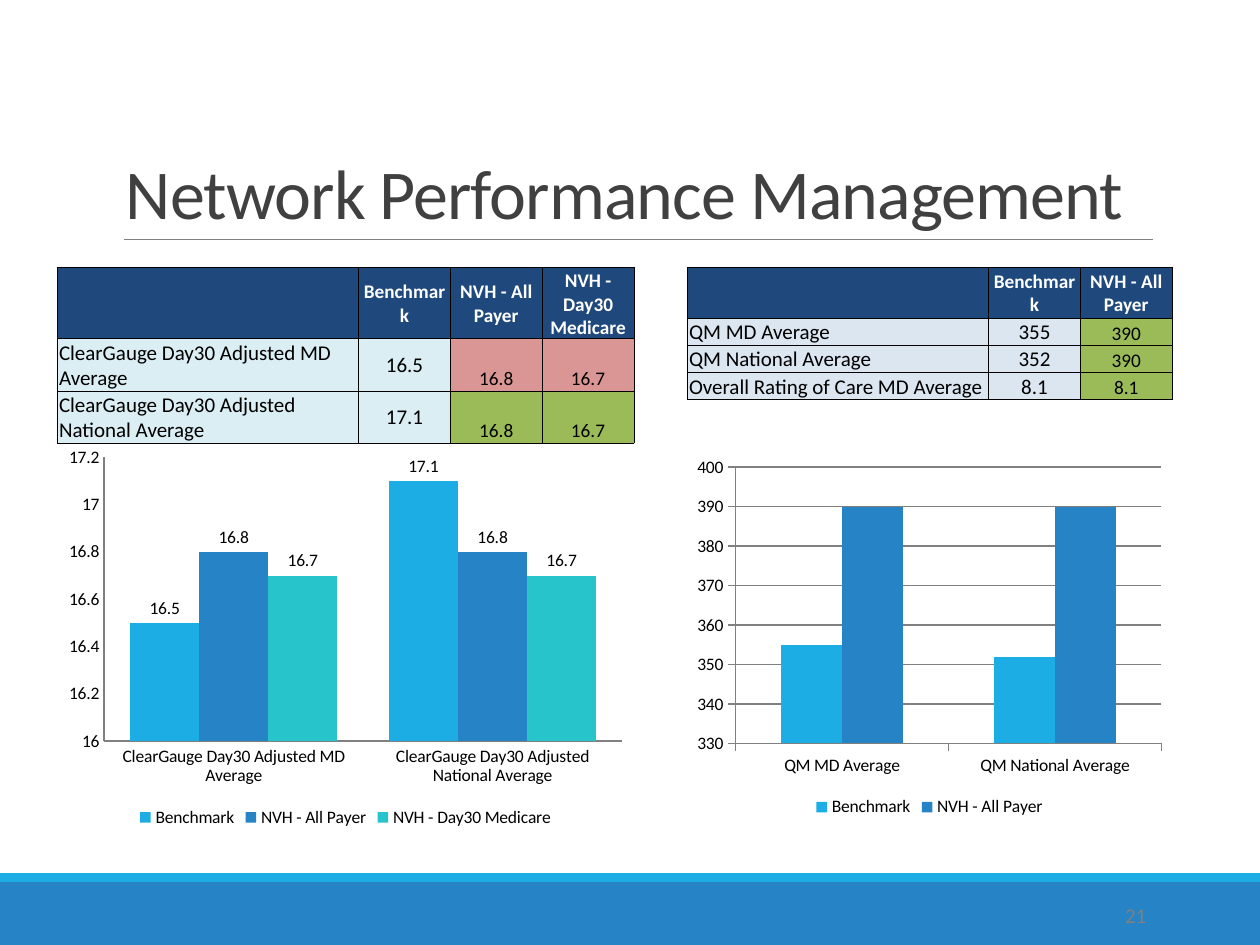
"""Build the network performance slide with two tables and two column charts."""
from lxml.etree import SubElement
from pptx import Presentation
from pptx.chart.data import CategoryChartData
from pptx.dml.color import RGBColor
from pptx.enum.chart import XL_CHART_TYPE, XL_LABEL_POSITION, XL_LEGEND_POSITION, XL_TICK_MARK
from pptx.enum.shapes import MSO_CONNECTOR, MSO_SHAPE
from pptx.enum.text import MSO_ANCHOR, PP_ALIGN
from pptx.oxml import parse_xml
from pptx.oxml.ns import nsdecls, qn
from pptx.util import Cm, Pt

BLUE = RGBColor(0x26, 0x83, 0xC6)
SKY = RGBColor(0x1C, 0xAD, 0xE4)
TEAL = RGBColor(0x28, 0xC4, 0xCC)
NAVY = RGBColor(0x1F, 0x49, 0x7D)
PALE_AQUA = RGBColor(0xDA, 0xEE, 0xF3)
PALE_BLUE = RGBColor(0xDC, 0xE6, 0xF1)
RED = RGBColor(0xDA, 0x96, 0x94)
GREEN = RGBColor(0x9B, 0xBB, 0x59)
DARK = RGBColor(0x40, 0x40, 0x40)
GREY = RGBColor(0x80, 0x80, 0x80)
BLACK = RGBColor(0, 0, 0)
WHITE = RGBColor(0xFF, 0xFF, 0xFF)

LEFT, RIGHT, TABLE_TOP = 1.16, 13.86, 5.39
LABEL_WIDTH, VALUE_WIDTH = 6.07, 1.85
BENCHMARK, ALL_PAYER, MEDICARE = "Benchmark", "NVH - All Payer", "NVH - Day30 Medicare"


class SlideBuilder:
    """Hold the style and the current slide."""

    font_name = "Calibri"
    series_colors = (SKY, BLUE, TEAL)

    def __init__(self, page):
        self.page = page

    def style(self, font, size, color, bold=False):
        font.name, font.size, font.bold = self.font_name, Pt(size), bold
        font.color.rgb = color

    def band(self, top, height, color):
        bar = self.page.shapes.add_shape(MSO_SHAPE.RECTANGLE, 0, Cm(top), Cm(25.4), Cm(height))
        bar.shadow.inherit = False
        bar.fill.solid()
        bar.fill.fore_color.rgb = color
        bar.line.fill.background()

    def rule(self, left, right, top):
        line = self.page.shapes.add_connector(
            MSO_CONNECTOR.STRAIGHT, Cm(left), Cm(top), Cm(right), Cm(top))
        line.line.color.rgb = GREY
        line.line.width = Pt(0.5)
        SubElement(line._element.spPr, qn("a:effectLst"))

    def text(self, words, place, size, color, anchor, align=PP_ALIGN.LEFT, spacing=1.0, tracking=0):
        frame = self.page.shapes.add_textbox(*map(Cm, place)).text_frame
        frame.word_wrap = True
        frame.vertical_anchor = anchor
        para = frame.paragraphs[0]
        span = para.add_run()
        span.text = words
        span._r.get_or_add_rPr().set("spc", str(tracking))
        para.alignment, para.line_spacing = align, spacing
        self.style(para.font, size, color)

    def cell(self, cell, words, fill, size=12, color=BLACK, bold=False,
             align=PP_ALIGN.CENTER, anchor=MSO_ANCHOR.MIDDLE):
        cell.text = words
        cell.vertical_anchor = anchor
        cell.margin_left = cell.margin_right = cell.margin_top = Cm(0.03)
        cell.margin_bottom = 0
        para = cell.text_frame.paragraphs[0]
        para.alignment = align
        self.style(para.font, size, color, bold)
        properties = cell._tc.get_or_add_tcPr()
        for side in ("lnL", "lnR", "lnT", "lnB"):
            properties.append(parse_xml(
                f'<a:{side} {nsdecls("a")} w="6350"><a:solidFill>'
                f'<a:srgbClr val="{BLACK}"/></a:solidFill></a:{side}>'))
        cell.fill.solid()
        cell.fill.fore_color.rgb = fill

    def table(self, left, headings, rows, label_fill, heights):
        widths = [LABEL_WIDTH] + [VALUE_WIDTH] * len(headings)
        row_heights = [heights[0]] + [heights[1]] * len(rows)
        table = self.page.shapes.add_table(
            len(row_heights), len(widths), Cm(left), Cm(TABLE_TOP),
            Cm(sum(widths)), Cm(sum(row_heights))).table
        for column, width in zip(table.columns, widths):
            column.width = Cm(width)
        for row, height in zip(table.rows, row_heights):
            row.height = Cm(height)
        for index, heading in enumerate(["", *headings]):
            self.cell(table.cell(0, index), heading, NAVY, 11, WHITE, True)
        for number, (label, benchmark, results, result_fill) in enumerate(rows, 1):
            self.cell(table.cell(number, 0), label, label_fill, align=PP_ALIGN.LEFT)
            self.cell(table.cell(number, 1), benchmark, label_fill)
            for index, result in enumerate(results, 2):
                self.cell(table.cell(number, index), result, result_fill, 11,
                          anchor=MSO_ANCHOR.BOTTOM)

    def chart(self, place, categories, series, scale, gap, tick, grid=False, labels=False):
        data = CategoryChartData()
        data.categories = categories
        for name, values in series.items():
            data.add_series(name, values)
        chart = self.page.shapes.add_chart(
            XL_CHART_TYPE.COLUMN_CLUSTERED, *map(Cm, place), data).chart
        self.style(chart.font, 10, BLACK)
        chart.has_title = False
        chart.has_legend = True
        chart.legend.position = XL_LEGEND_POSITION.BOTTOM
        chart.legend.include_in_layout = False
        value_axis = chart.value_axis
        value_axis.minimum_scale, value_axis.maximum_scale, value_axis.major_unit = scale
        value_axis.has_major_gridlines = grid
        lines = [chart.category_axis.format.line, value_axis.format.line]
        if grid:
            lines.append(value_axis.major_gridlines.format.line)
        for line in lines:
            line.color.rgb = GREY
            line.width = Pt(1)
        for axis in (chart.category_axis, value_axis):
            axis.major_tick_mark = tick
            axis.minor_tick_mark = XL_TICK_MARK.NONE
        plot = chart.plots[0]
        plot.gap_width, plot.overlap, plot.vary_by_categories = gap, 0, False
        for bars, color in zip(plot.series, self.series_colors):
            bars.format.fill.solid()
            bars.format.fill.fore_color.rgb = color
            if labels:
                bars.data_labels.show_value = True
                bars.data_labels.number_format = "0.0"
                bars.data_labels.number_format_is_linked = False
                bars.data_labels.position = XL_LABEL_POSITION.OUTSIDE_END


def main():
    deck = Presentation()
    deck.slide_width, deck.slide_height = Cm(25.4), Cm(19.05)
    slide = SlideBuilder(deck.slides.add_slide(deck.slide_layouts[6]))

    slide.band(17.78, 1.27, BLUE)
    slide.band(17.6, 0.18, SKY)
    slide.rule(2.49, 23.24, 4.83)
    slide.text("Network Performance Management", (2.29, 0.79, 20.96, 4.04), 40, DARK,
               MSO_ANCHOR.BOTTOM, spacing=0.85, tracking=-50)
    slide.text("21", (20.86, 17.94, 2.5, 1.01), 12, GREY, MSO_ANCHOR.MIDDLE, PP_ALIGN.RIGHT)

    readmission = ["ClearGauge Day30 Adjusted MD Average",
                   "ClearGauge Day30 Adjusted National Average"]
    quality = ["QM MD Average", "QM National Average"]
    slide.table(RIGHT, [BENCHMARK, ALL_PAYER], [
        (quality[0], "355", ["390"], GREEN),
        (quality[1], "352", ["390"], GREEN),
        ("Overall Rating of Care MD Average", "8.1", ["8.1"], GREEN),
    ], PALE_BLUE, (1.02, 0.55))
    slide.table(LEFT, [BENCHMARK, ALL_PAYER, MEDICARE], [
        (readmission[0], "16.5", ["16.8", "16.7"], RED),
        (readmission[1], "17.1", ["16.8", "16.7"], GREEN),
    ], PALE_AQUA, (1.44, 1.05))

    slide.chart((LEFT, 8.86, 11.61, 7.92), readmission,
                {BENCHMARK: (16.5, 17.1), ALL_PAYER: (16.8, 16.8), MEDICARE: (16.7, 16.7)},
                (16, 17.2, 0.2), 75, XL_TICK_MARK.NONE, labels=True)
    slide.chart((RIGHT, 9.07, 9.75, 7.5), quality,
                {BENCHMARK: (355, 352), ALL_PAYER: (390, 390)},
                (330, 400, 10), 150, XL_TICK_MARK.OUTSIDE, grid=True)
    deck.save("out.pptx")


if __name__ == "__main__":
    main()
